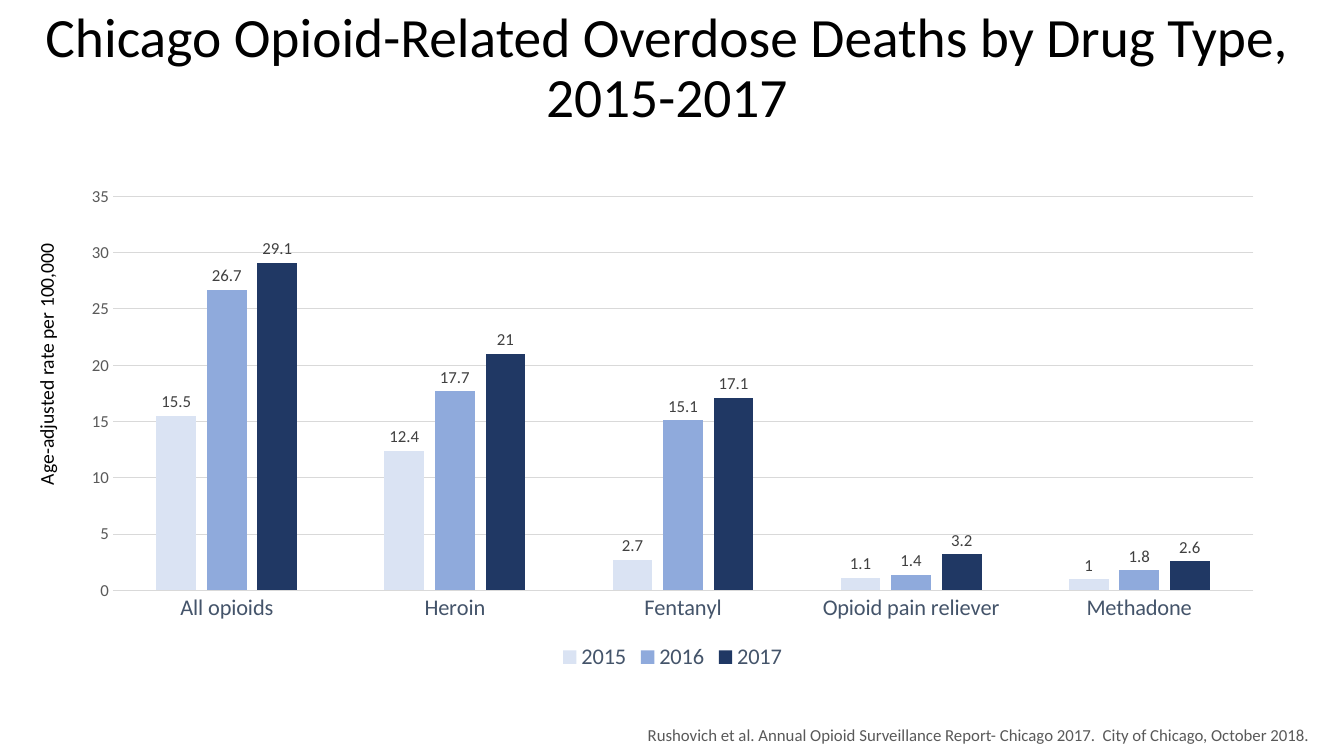
"""Build a slide with a column chart of opioid overdose death rates by drug type."""
from pptx import Presentation
from pptx.chart.data import CategoryChartData
from pptx.dml.color import RGBColor
from pptx.enum.chart import XL_CHART_TYPE, XL_LABEL_POSITION, XL_LEGEND_POSITION, XL_TICK_MARK
from pptx.enum.text import MSO_ANCHOR, MSO_AUTO_SIZE, PP_ALIGN
from pptx.util import Inches, Pt

COLUMN = XL_CHART_TYPE.COLUMN_CLUSTERED
OUTSIDE = XL_LABEL_POSITION.OUTSIDE_END
BOTTOM = XL_LEGEND_POSITION.BOTTOM
NO_TICK = XL_TICK_MARK.NONE
MIDDLE = MSO_ANCHOR.MIDDLE
TOP = MSO_ANCHOR.TOP
GROW = MSO_AUTO_SIZE.SHAPE_TO_FIT_TEXT
FIXED = MSO_AUTO_SIZE.NONE
LEFT, CENTER, RIGHT = PP_ALIGN.LEFT, PP_ALIGN.CENTER, PP_ALIGN.RIGHT

COLORS = {
    "black": "000000", "gray": "595959", "label": "404040", "slate": "44546A",
    "grid": "D9D9D9", "2015": "DAE3F3", "2016": "8FAADC", "2017": "203864",
}
DRUGS = ["All opioids", "Heroin", "Fentanyl", "Opioid pain reliever", "Methadone"]
RATES = {
    "2015": [15.5, 12.4, 2.7, 1.1, 1],
    "2016": [26.7, 17.7, 15.1, 1.4, 1.8],
    "2017": [29.1, 21, 17.1, 3.2, 2.6],
}


def style(font, size, color):
    font.name = "Calibri"
    font.size = Pt(size)
    font.color.rgb = RGBColor.from_string(COLORS[color])


def add_text(text, box, size, color, align, anchor=TOP, fit=GROW, wrap=True):
    shape = slide.shapes.add_textbox(*[Inches(n) for n in box])
    frame = shape.text_frame
    frame.word_wrap = wrap
    frame.auto_size = fit
    frame.vertical_anchor = anchor
    para = frame.paragraphs[0]
    para.text = text
    para.alignment = align
    style(para.font, size, color)
    return shape


deck = Presentation()
deck.slide_width = Inches(13.33)
deck.slide_height = Inches(7.5)
slide = deck.slides.add_slide(deck.slide_layouts[6])

data = CategoryChartData()
data.categories = DRUGS
for year, rates in RATES.items():
    data.add_series(year, rates)
chart = slide.shapes.add_chart(
    COLUMN, Inches(0.67), Inches(1.75), Inches(12), Inches(4.95), data).chart
style(chart.font, 10, "black")
chart.has_title = False
chart.has_legend = True
chart.legend.position = BOTTOM
chart.legend.include_in_layout = False
style(chart.legend.font, 16, "slate")

plot = chart.plots[0]
plot.gap_width = 219
plot.overlap = -27
plot.vary_by_categories = False
for bars in plot.series:
    bars.format.fill.solid()
    bars.format.fill.fore_color.rgb = RGBColor.from_string(COLORS[bars.name])
    labels = bars.data_labels
    labels.show_value = True
    labels.position = OUTSIDE
    style(labels.font, 12, "label")

drugs, scale = chart.category_axis, chart.value_axis
for axis, size, color in [(drugs, 16, "slate"), (scale, 12, "gray")]:
    axis.major_tick_mark = NO_TICK
    axis.minor_tick_mark = NO_TICK
    style(axis.tick_labels.font, size, color)
scale.has_major_gridlines = True
scale.format.line.fill.background()
for line in [drugs.format.line, scale.major_gridlines.format.line]:
    line.color.rgb = RGBColor.from_string(COLORS["grid"])
    line.width = Pt(0.75)

title = add_text("Chicago Opioid-Related Overdose Deaths by Drug Type, 2015-2017",
                 (0.26, 0.19, 12.71, 1), 39.6, "black", CENTER, MIDDLE, FIXED)
title.text_frame.paragraphs[0].line_spacing = 0.9
add_text("Rushovich et al. Annual Opioid Surveillance Report- Chicago 2017.  "
         "City of Chicago, October 2018.", (4.44, 7.14, 8.65, 0.3), 12, "gray", RIGHT)
rate = add_text("Age-adjusted rate per 100,000", (-0.85, 3.43, 2.62, 0.34),
                14, "black", LEFT, wrap=False)
rate.rotation = 270

deck.save("out.pptx")
